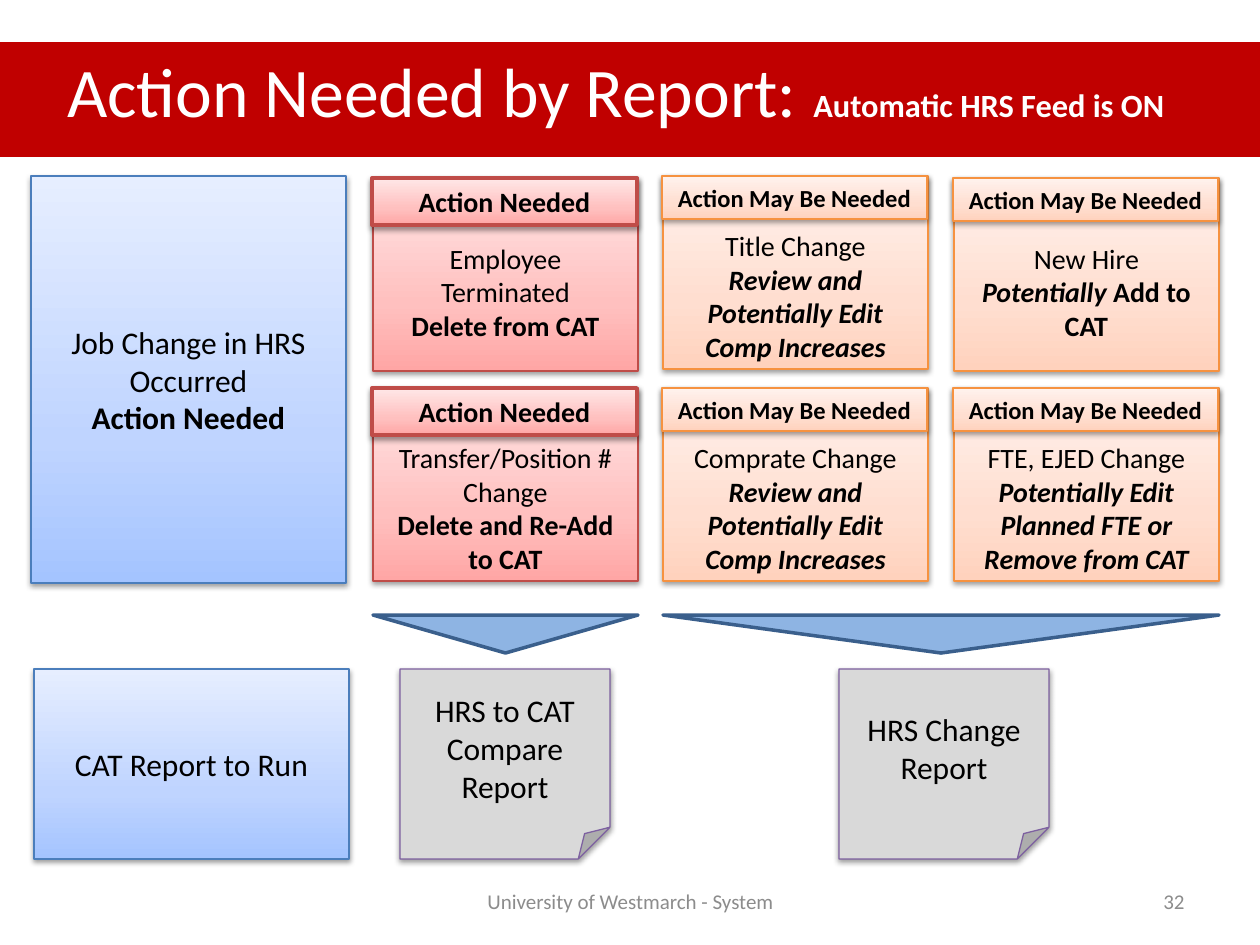
from copy import deepcopy
from pptx import Presentation, util as u
from pptx.dml.color import RGBColor
from pptx.enum import shapes, text
from pptx.oxml import parse_xml
from pptx.oxml.ns import qn, nsdecls

PX = 914400 / 126
HUE = {"band": "C00000", "white": "FFFFFF", "black": "000000", "muted": "8C8C8C",
       "note": "D9D9D9", "plum": "7D60A0", "arrow": "8EB4E3", "edge": "3A5F8C"}
TONE = {"blue": ("4B7EBC", ["A4C4FF", "BFD4FF", "E6EEFF"]),
        "red": ("BF4C48", ["FFA6A5", "FFC0BF", "FFE7E7"]),
        "peach": ("F69240", ["FFD2BD", "FFDED0", "FFF2ED"])}
KIND = shapes.MSO_SHAPE
MID, LOW, TOP = text.MSO_ANCHOR.MIDDLE, text.MSO_ANCHOR.BOTTOM, text.MSO_ANCHOR.TOP
MID_AL, LEFT, RIGHT = text.PP_ALIGN.CENTER, text.PP_ALIGN.LEFT, text.PP_ALIGN.RIGHT
rgb = RGBColor.from_string

deck = Presentation()
deck.slide_width, deck.slide_height = u.Inches(10), u.Inches(7.5)
slide = deck.slides.add_slide(deck.slide_layouts[5])


def write(shape, paras, size, hue="black", anchor=MID, align=MID_AL):
    frame = shape.text_frame
    form = {"word_wrap": True, "auto_size": text.MSO_AUTO_SIZE.NONE, "vertical_anchor": anchor}
    for key, val in form.items():
        setattr(frame, key, val)
    for n, runs in enumerate(paras):
        para = frame.add_paragraph() if n else frame.paragraphs[0]
        para.alignment = align
        for words, style in runs:
            run = para.add_run()
            run.text = words
            form = {"name": "Calibri", "size": u.Pt(size), "bold": "b" in style, "italic": "i" in style}
            for key, val in form.items():
                setattr(run.font, key, val)
            run.font.color.rgb = rgb(HUE[hue])


def draw(kind, area, fill, line, width=0.75, shade=True):
    shape = slide.shapes.add_shape(kind, *[round(v * PX) for v in area])
    if isinstance(fill, list):
        shape.fill.gradient()
        shape.fill.gradient_angle = 90
        stops = shape._element.spPr.find(qn("a:gradFill")).find(qn("a:gsLst"))
        stops.insert(1, deepcopy(stops[0]))
        for stop, spot, hue in zip(shape.fill.gradient_stops, (0, 0.35, 1), fill):
            stop.position = spot
            stop.color.rgb = rgb(hue)
    else:
        shape.fill.solid()
        shape.fill.fore_color.rgb = rgb(fill)
    shape.line.color.rgb = rgb(line)
    shape.line.width = u.Pt(width)
    shape.shadow.inherit = False
    if shade:
        shape._element.spPr.find(qn("a:effectLst")).append(parse_xml(
            f'<a:outerShdw {nsdecls("a")} blurRad="40000" dist="20000" dir="5400000" '
            'rotWithShape="0"><a:srgbClr val="000000"><a:alpha val="38000"/>'
            '</a:srgbClr></a:outerShdw>'))
    return shape


title = slide.shapes.title
place = {"left": 0, "top": 42, "width": 1260, "height": 115}
for key, val in place.items():
    setattr(title, key, round(val * PX))
title.fill.solid()
title.fill.fore_color.rgb = rgb(HUE["band"])
write(title, [[("Action Needed by Report: ", ""), ("Automatic HRS Feed is ON", "b")]],
      39.8, "white", TOP, LEFT)
title.text_frame.margin_left = round(67 * PX)
lead = title.text_frame.paragraphs[0]
lead.space_before = u.Pt(2)
lead.runs[1].font.size = u.Pt(18.5)

line, fill = TONE["blue"]
for area, paras in [
    ((31, 176, 315, 407), [[("Job Change in HRS Occurred", "")], [("Action Needed", "b")]]),
    ((34, 669, 315, 190), [[("CAT Report to Run", "")]]),
]:
    write(draw(KIND.RECTANGLE, area, fill, line), paras, 18)

review = [("Review and Potentially Edit Comp Increases", "bi")]
cards = [
    ("red", 373, 178, MID, [[("Employee Terminated", "")], [("Delete from CAT", "b")]]),
    ("peach", 663, 176, LOW, [[("Title Change", "")], review]),
    ("peach", 954, 178, MID, [[("New Hire", "")], [("Potentially", "bi"), (" Add to CAT", "b")]]),
    ("red", 373, 388, LOW, [[("Transfer/Position # Change", "")], [("Delete and Re-Add to CAT", "b")]]),
    ("peach", 663, 388, LOW, [[("Comprate Change", "")], review]),
    ("peach", 954, 388, LOW, [[("FTE, EJED Change", "")],
                              [("Potentially Edit Planned FTE or Remove from CAT", "bi")]]),
]
heads = {"red": ("Action Needed", 47, 16, 2.25, MID),
         "peach": ("Action May Be Needed", 43, 14, 0.75, LOW)}
for tone, x, y, anchor, paras in cards:
    line, fill = TONE[tone]
    card = draw(KIND.RECTANGLE, (x, y, 265, 193), fill, line)
    write(card, paras, 16, anchor=anchor)
    if anchor == MID:
        card.text_frame.margin_top = round(40 * PX)
    label, high, size, width, seat = heads[tone]
    head = draw(KIND.RECTANGLE, (x - 1, y, 265, high), fill, line, width)
    write(head, [[(label, "b")]], size, anchor=seat)

for x, wide in [(373, 265), (663, 556)]:
    arrow = draw(KIND.ISOSCELES_TRIANGLE, (x, 615, wide, 38), HUE["arrow"], HUE["edge"], 2, False)
    arrow.rotation = 180

for x, label in [(400, "HRS to CAT Compare Report"), (839, "HRS Change Report")]:
    note = draw(KIND.FOLDED_CORNER, (x, 669, 210, 190), HUE["note"], HUE["plum"])
    write(note, [[(label, "")]], 18)

for x, wide, label, align in [(431, 399, "University of Westmarch - System", MID_AL),
                              (903, 294, "32", RIGHT)]:
    foot = slide.shapes.add_textbox(*[round(v * PX) for v in (x, 876, wide, 50)])
    write(foot, [[(label, "")]], 12, "muted", align=align)

deck.save("out.pptx")
